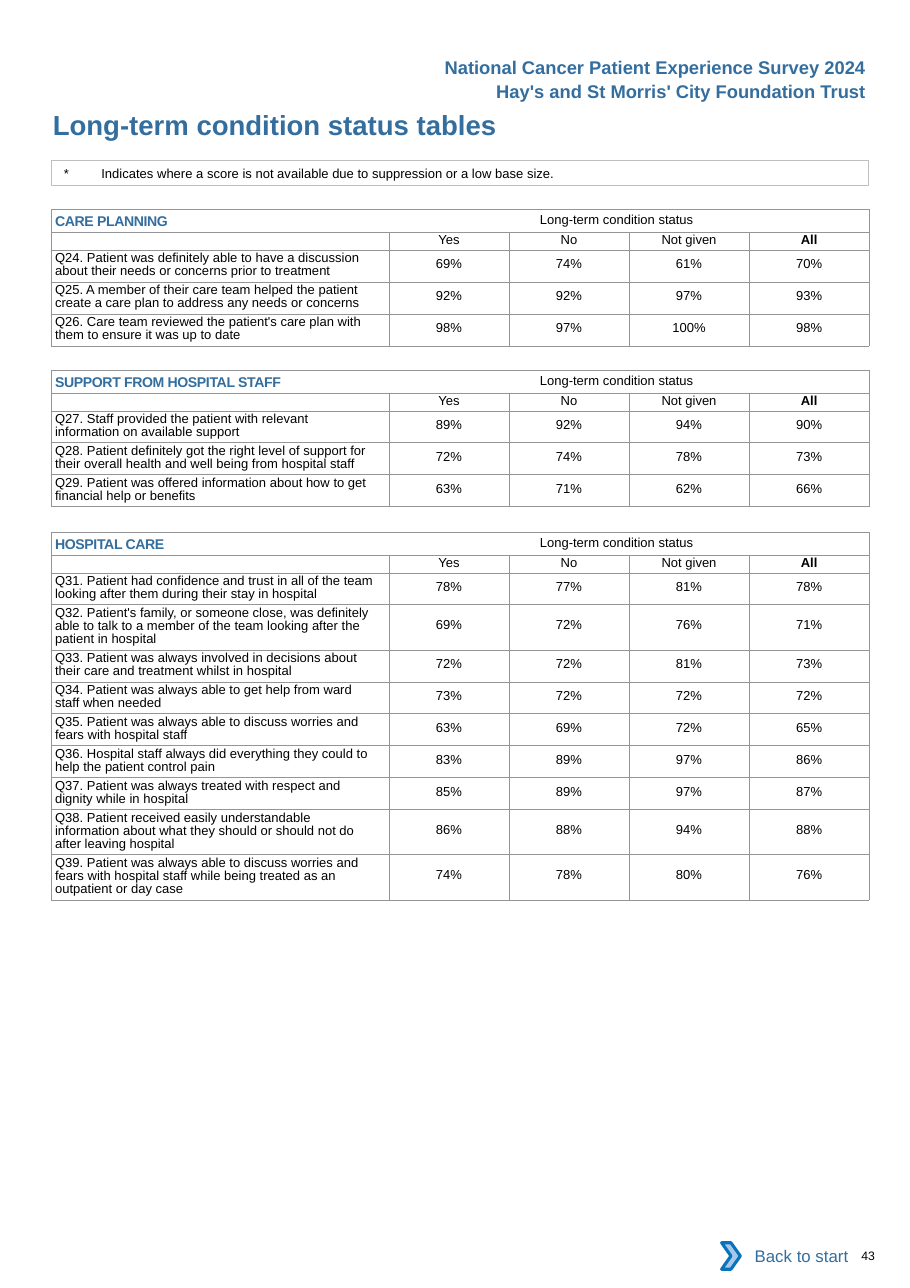
"""Build the long-term condition status page of a patient survey report."""
from dataclasses import dataclass

from lxml import etree
from pptx import Presentation
from pptx.dml.color import RGBColor
from pptx.enum.shapes import MSO_SHAPE
from pptx.enum.text import MSO_ANCHOR, MSO_AUTO_SIZE, PP_ALIGN
from pptx.oxml.ns import qn
from pptx.util import Inches, Pt

LEFT, CENTER, RIGHT = PP_ALIGN.LEFT, PP_ALIGN.CENTER, PP_ALIGN.RIGHT
TOP, MIDDLE = MSO_ANCHOR.TOP, MSO_ANCHOR.MIDDLE
GROW = MSO_AUTO_SIZE.SHAPE_TO_FIT_TEXT
RECTANGLE, CHEVRON = MSO_SHAPE.RECTANGLE, MSO_SHAPE.CHEVRON
FONT, BLUE, BLACK, GRID = "Arial", "336E9F", "000000", "939598"
MARGIN, CONTENT_WIDTH = 0.47, 7.41
COLUMN_WIDTHS = [3.06, 1.09, 1.09, 1.09, 1.09]
STATUSES = ["Yes", "No", "Not given", "All"]


@dataclass
class Question:
    text: str
    scores: str
    lines: int = 2


@dataclass
class Section:
    title: str
    top: float
    questions: list[Question]


SECTIONS = [
    Section("CARE PLANNING", 1.9, [
        Question("Q24. Patient was definitely able to have a discussion about their needs or concerns prior to treatment", "69% 74% 61% 70%"),
        Question("Q25. A member of their care team helped the patient create a care plan to address any needs or concerns", "92% 92% 97% 93%"),
        Question("Q26. Care team reviewed the patient's care plan with them to ensure it was up to date", "98% 97% 100% 98%"),
    ]),
    Section("SUPPORT FROM HOSPITAL STAFF", 3.36, [
        Question("Q27. Staff provided the patient with relevant information on available support", "89% 92% 94% 90%"),
        Question("Q28. Patient definitely got the right level of support for their overall health and well being from hospital staff", "72% 74% 78% 73%"),
        Question("Q29. Patient was offered information about how to get financial help or benefits", "63% 71% 62% 66%"),
    ]),
    Section("HOSPITAL CARE", 4.83, [
        Question("Q31. Patient had confidence and trust in all of the team looking after them during their stay in hospital", "78% 77% 81% 78%"),
        Question("Q32. Patient's family, or someone close, was definitely able to talk to a member of the team looking after the patient in hospital", "69% 72% 76% 71%", 3),
        Question("Q33. Patient was always involved in decisions about their care and treatment whilst in hospital", "72% 72% 81% 73%"),
        Question("Q34. Patient was always able to get help from ward staff when needed", "73% 72% 72% 72%"),
        Question("Q35. Patient was always able to discuss worries and fears with hospital staff", "63% 69% 72% 65%"),
        Question("Q36. Hospital staff always did everything they could to help the patient control pain", "83% 89% 97% 86%"),
        Question("Q37. Patient was always treated with respect and dignity while in hospital", "85% 89% 97% 87%"),
        Question("Q38. Patient received easily understandable information about what they should or should not do after leaving hospital", "86% 88% 94% 88%", 3),
        Question("Q39. Patient was always able to discuss worries and fears with hospital staff while being treated as an outpatient or day case", "74% 78% 80% 76%", 3),
    ]),
]


def rgb(value: str) -> RGBColor:
    """Turn a hex string into a colour."""
    return RGBColor.from_string(value)


def style_span(span, size: float, color: str = BLACK, bold: bool = False) -> None:
    """Give a run its font."""
    span.font.name, span.font.size, span.font.bold = FONT, Pt(size), bold
    span.font.color.rgb = rgb(color)


def write(para, text: str, size: float, color: str = BLACK, bold: bool = False, align=LEFT) -> None:
    """Fill a paragraph with evenly styled text."""
    para.text, para.alignment = text, align
    for span in para.runs:
        style_span(span, size, color, bold)


def set_margins(target, left: float = 0, top: float = 0, right: float = 0, bottom: float = 0) -> None:
    """Set the inner margins of a text frame or a cell."""
    target.margin_left, target.margin_top = Inches(left), Inches(top)
    target.margin_right, target.margin_bottom = Inches(right), Inches(bottom)


def add_tab(para, position: float) -> None:
    """Add a left tab stop to a paragraph."""
    tabs = etree.SubElement(para._p.get_or_add_pPr(), qn("a:tabLst"))
    etree.SubElement(tabs, qn("a:tab"), pos=str(Inches(position)), algn="l")


def add_box(page, left: float, top: float, width: float, height: float, wrap: bool = True):
    """Add a text box that grows with its text."""
    box = page.shapes.add_textbox(Inches(left), Inches(top), Inches(width), Inches(height))
    box.text_frame.word_wrap, box.text_frame.auto_size = wrap, GROW
    return box


def add_panel(shapes, kind, left: float, top: float, width: float, height: float,
              fill: str = "", line: str = "", weight: float = 0.5):
    """Add a preset shape with an optional fill and outline."""
    panel = shapes.add_shape(kind, Inches(left), Inches(top), Inches(width), Inches(height))
    panel.shadow.inherit = False
    for enabled, target in ((fill, panel.fill), (line, panel.line.fill)):
        if enabled:
            target.solid()
            target.fore_color.rgb = rgb(enabled)
        else:
            target.background()
    if line:
        panel.line.width = Pt(weight)
    return panel


def format_cell(cell) -> None:
    """Clear a cell's fill and margins and draw its grid lines."""
    set_margins(cell)
    properties = cell._tc.get_or_add_tcPr()
    for side in ("a:lnL", "a:lnR", "a:lnT", "a:lnB"):
        border = etree.SubElement(properties, qn(side), w=str(Pt(0.5)))
        solid = etree.SubElement(border, qn("a:solidFill"))
        etree.SubElement(solid, qn("a:srgbClr"), val=GRID)
    cell.fill.background()
    etree.SubElement(cell.text_frame.paragraphs[0]._p, qn("a:endParaRPr"), sz="600")


def write_heading(cell, title: str) -> None:
    """Write the section title and the shared column caption."""
    set_margins(cell, left=0.03)
    cell.vertical_anchor = MIDDLE
    para = cell.text_frame.paragraphs[0]
    para.line_spacing = Pt(11.8)
    add_tab(para, 4.4)
    name, caption = para.add_run(), para.add_run()
    name.text, caption.text = f"{title}\t", "Long-term condition status"
    style_span(name, 15.8, BLUE, True)
    style_span(caption, 8.5)
    name.font._element.set("baseline", "-8000")
    name.font._element.set("spc", "-20")


def add_section(page, section: Section) -> None:
    """Add one section table."""
    heights = [0.21, 0.16] + [0.29 if item.lines == 2 else 0.41 for item in section.questions]
    frame = page.shapes.add_table(len(heights), len(COLUMN_WIDTHS), Inches(MARGIN), Inches(section.top),
                                  Inches(CONTENT_WIDTH), Inches(sum(heights)))
    table = frame.table
    table.first_row = table.horz_banding = False
    for column, width in zip(table.columns, COLUMN_WIDTHS):
        column.width = Inches(width)
    for row, height in zip(table.rows, heights):
        row.height = Inches(height)
        for cell in row.cells:
            format_cell(cell)
    table.cell(0, 0).merge(table.cell(0, 4))
    write_heading(table.cell(0, 0), section.title)
    for column, status in enumerate(STATUSES, 1):
        para = table.cell(1, column).text_frame.paragraphs[0]
        write(para, status, 8.5, bold=status == "All", align=CENTER)
        para.line_spacing = Pt(9.9)
    for row, question in enumerate(section.questions, 2):
        cell = table.cell(row, 0)
        set_margins(cell, left=0.03, top=0.02, right=0.13)
        para = cell.text_frame.paragraphs[0]
        write(para, question.text, 8.5)
        para.line_spacing, para.space_before = Pt(8.6), Pt(1.6)
        for column, score in enumerate(question.scores.split(), 1):
            cell = table.cell(row, column)
            set_margins(cell, top=0.06 if question.lines == 2 else 0.12)
            para = cell.text_frame.paragraphs[0]
            write(para, score, 8.5, align=CENTER)
            para.space_before = Pt(4.2 if question.lines == 2 else 8.6)


def add_header(page) -> None:
    """Place the title, the running header and the footnote."""
    title = page.shapes.title
    title.left, title.top, title.width, title.height = Inches(MARGIN), Inches(0.96), Inches(4.5), Inches(0.3)
    frame = title.text_frame
    set_margins(frame, left=0.01, top=0.02)
    frame.vertical_anchor, frame.auto_size = TOP, GROW
    write(frame.paragraphs[0], "Long-term condition status tables", 18, BLUE, True)
    for text, left, top in (("Hay's and St Morris' City Foundation Trust", 4.16, 0.68),
                            ("National Cancer Patient Experience Survey 2024", 3.92, 0.46)):
        box = add_box(page, left, top, 7.96 - left, 0.3, wrap=False)
        write(box.text_frame.paragraphs[0], text, 12, BLUE, True, RIGHT)
    note = add_panel(page.shapes, RECTANGLE, MARGIN, 1.46, CONTENT_WIDTH, 0.22, line="BFBFBF")
    set_margins(note.text_frame, left=0.11, top=0.04, bottom=0.04)
    note.text_frame.vertical_anchor = TOP
    para = note.text_frame.paragraphs[0]
    write(para, "*\tIndicates where a score is not available due to suppression or a low base size.", 8.5)
    add_tab(para, 0.34)


def add_footer(page) -> None:
    """Place the page number and the back-to-start button."""
    number = add_box(page, 7.72, 11.33, 0.51, 0.13)
    set_margins(number.text_frame, left=0.1)
    write(number.text_frame.paragraphs[0], "43", 8)
    button = page.shapes.add_group_shape()
    label = add_panel(button.shapes, RECTANGLE, 6.62, 11.19, 1.18, 0.42, fill="FFFFFF")
    label.text_frame.vertical_anchor = MIDDLE
    write(label.text_frame.paragraphs[0], "Back to start", 11, BLUE, align=RIGHT)
    add_panel(button.shapes, CHEVRON, 6.55, 11.28, 0.17, 0.24, "A8C7E9", "0A74BB", 2)


def main() -> None:
    """Build and save the deck."""
    deck = Presentation()
    deck.slide_width, deck.slide_height = Inches(8.26), Inches(11.69)
    page = deck.slides.add_slide(deck.slide_layouts[5])
    add_header(page)
    for section in SECTIONS:
        add_section(page, section)
    add_footer(page)
    deck.save("out.pptx")


if __name__ == "__main__":
    main()
